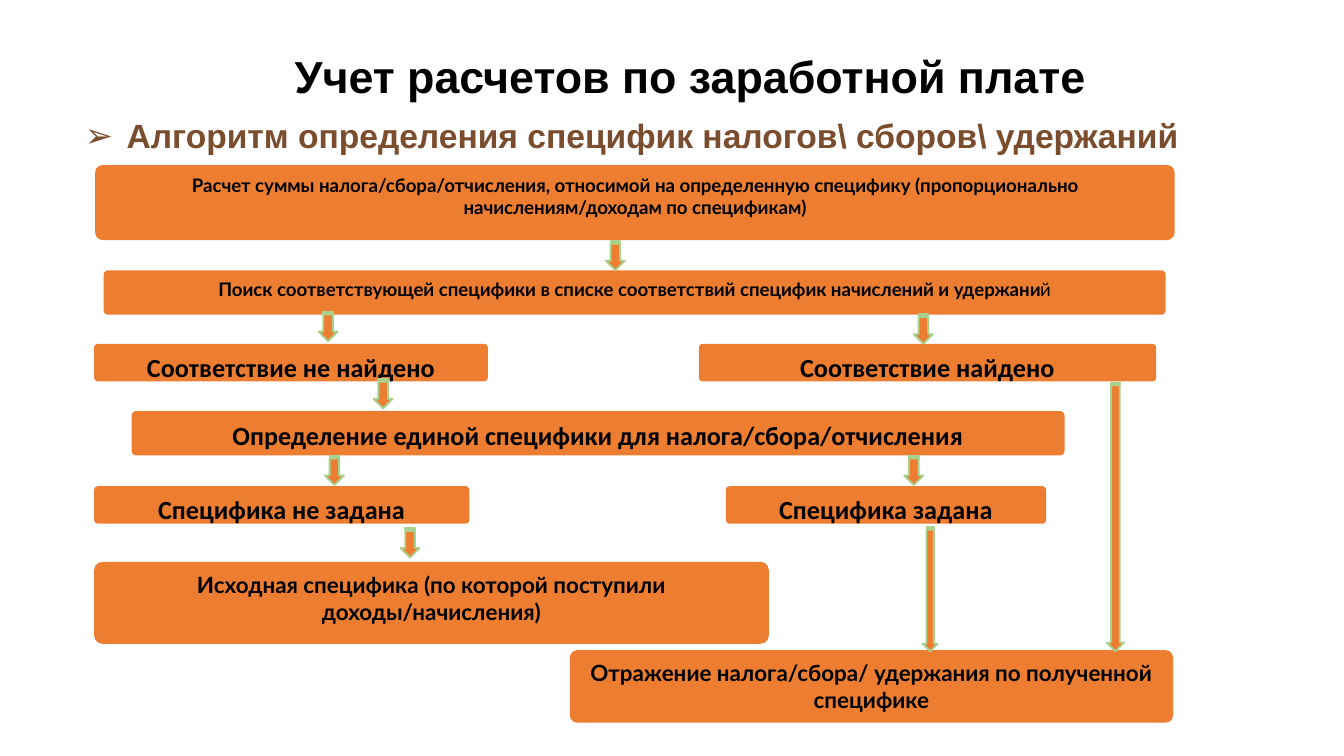
from dataclasses import dataclass

from lxml import etree
from pptx import Presentation
from pptx.dml.color import RGBColor
from pptx.enum.shapes import MSO_SHAPE
from pptx.enum.text import MSO_ANCHOR, MSO_AUTO_SIZE, PP_ALIGN
from pptx.oxml.ns import qn
from pptx.util import Cm, Pt

BOX = MSO_SHAPE.ROUNDED_RECTANGLE
ARROW = MSO_SHAPE.STRIPED_RIGHT_ARROW
TOP, MIDDLE = MSO_ANCHOR.TOP, MSO_ANCHOR.MIDDLE
LEFT, CENTER = PP_ALIGN.LEFT, PP_ALIGN.CENTER
FIXED = MSO_AUTO_SIZE.NONE


@dataclass(frozen=True)
class Theme:
    ink: str = "000000"
    brown: str = "794D2D"
    orange: str = "ED7D31"
    green: str = "A9D18E"
    head: str = "Arial"
    body: str = "Lato"
    label: str = "Calibri"
    title: int = 24
    lead: int = 18
    large: int = 14
    medium: int = 12
    small: int = 10


class Chart:
    """Holds the theme and the slide on which the flow chart is drawn."""

    def __init__(self, slide, theme):
        self.slide = slide
        self.theme = theme

    def style(self, para, size, face, color):
        for run in para.runs:
            font = run.font
            font.size, font.name, font.bold = Pt(size), face, True
            font.color.rgb = RGBColor.from_string(color)

    def place(self, holder, text, area, anchor, align):
        """Move a placeholder, fill it and return its paragraph."""
        holder.left, holder.top, holder.width, holder.height = map(Cm, area)
        frame = holder.text_frame
        frame.text = text
        frame.word_wrap, frame.auto_size = True, FIXED
        frame.vertical_anchor = anchor
        para = frame.paragraphs[0]
        para.alignment, para.line_spacing = align, 0.9
        para.space_before = Pt(0)
        return para

    def title(self, text, area):
        look = self.theme
        para = self.place(self.slide.shapes.title, text, area, MIDDLE, CENTER)
        self.style(para, look.title, look.head, look.ink)

    def lead(self, text, area):
        look = self.theme
        para = self.place(self.slide.placeholders[1], text, area, TOP, LEFT)
        props = para._p.get_or_add_pPr()
        props.set("marL", str(Cm(0.79)))
        props.set("indent", str(Cm(-0.79)))
        etree.SubElement(props, qn("a:buFont")).set("typeface", look.head)
        etree.SubElement(props, qn("a:buChar")).set("char", "➢")
        self.style(para, look.lead, look.head, look.brown)

    def shape(self, kind, area):
        item = self.slide.shapes.add_shape(kind, *map(Cm, area))
        item.shadow.inherit = False
        item.fill.solid()
        item.fill.fore_color.rgb = RGBColor.from_string(self.theme.orange)
        return item

    def box(self, text, area, size, face, tail=""):
        """Draw a step; the tail is the end of its text, not in bold."""
        item = self.shape(BOX, area)
        item.adjustments[0] = 0.1
        item.line.fill.background()
        frame = item.text_frame
        frame.text = text
        frame.word_wrap, frame.vertical_anchor = True, TOP
        para = frame.paragraphs[0]
        para.alignment, para.space_after = CENTER, Pt(10)
        if tail:
            para.add_run().text = tail
        self.style(para, size, face, self.theme.ink)
        if tail:
            para.runs[-1].font.bold = False

    def arrow(self, mid, top, length=0.56, width=0.36):
        """Draw an arrow down from top, centred on mid."""
        area = (mid - length / 2, top + (length - width) / 2, length, width)
        item = self.shape(ARROW, area)
        item.rotation = 90
        item.line.color.rgb = RGBColor.from_string(self.theme.green)
        item.line.width = Pt(1)


def main():
    deck = Presentation()
    deck.slide_width, deck.slide_height = Cm(25.4), Cm(14.29)
    look = Theme()
    chart = Chart(deck.slides.add_slide(deck.slide_layouts[0]), look)

    chart.title("Учет расчетов по заработной плате", (2.82, 0.89, 20.45, 1.19))
    chart.lead("Алгоритм определения специфик налогов\\ сборов\\ удержаний",
               (1.35, 2.13, 22.81, 10.97))

    small = (look.small, look.body)
    medium = (look.medium, look.body)
    large = (look.large, look.label)
    edge, found, given = 1.78, 6.5, 9.19
    low, tall = 0.71, 0.84
    steps = [
        ("Расчет суммы налога/сбора/отчисления, относимой на определенную "
         "специфику (пропорционально начислениям/доходам по спецификам)",
         (1.8, 3.12, 20.4, 1.42), *small),
        ("Поиск соответствующей специфики в списке соответствий специфик "
         "начислений и удержани", (1.96, 5.11, 20.07, tall), *small, "й"),
        ("Соответствие не найдено", (edge, found, 7.44, low), *large),
        ("Соответствие найдено", (13.21, found, 8.64, low), *large),
        ("Определение единой специфики для налога/сбора/отчисления",
         (2.49, 7.77, 17.63, tall), *large),
        ("Специфика не задана", (edge, given, 7.09, low), *large),
        ("Специфика задана", (13.72, given, 6.05, low), *large),
        ("Исходная специфика (по которой поступили доходы/начисления)",
         (edge, 10.62, 12.75, 1.55), *medium),
        ("Отражение налога/сбора/ удержания по полученной специфике",
         (10.77, 12.29, 11.4, 1.37), *medium),
    ]
    for step in steps:
        chart.box(*step)

    arrows = [
        (11.63, 4.55), (6.2, 5.89), (17.45, 5.94), (7.24, 7.16),
        (21.08, 7.23, 5.08, 0.33), (17.27, 8.61), (6.32, 8.61),
        (7.75, 9.98), (17.58, 9.97, 2.34, 0.28),
    ]
    for arrow in arrows:
        chart.arrow(*arrow)

    deck.save("out.pptx")


if __name__ == "__main__":
    main()
